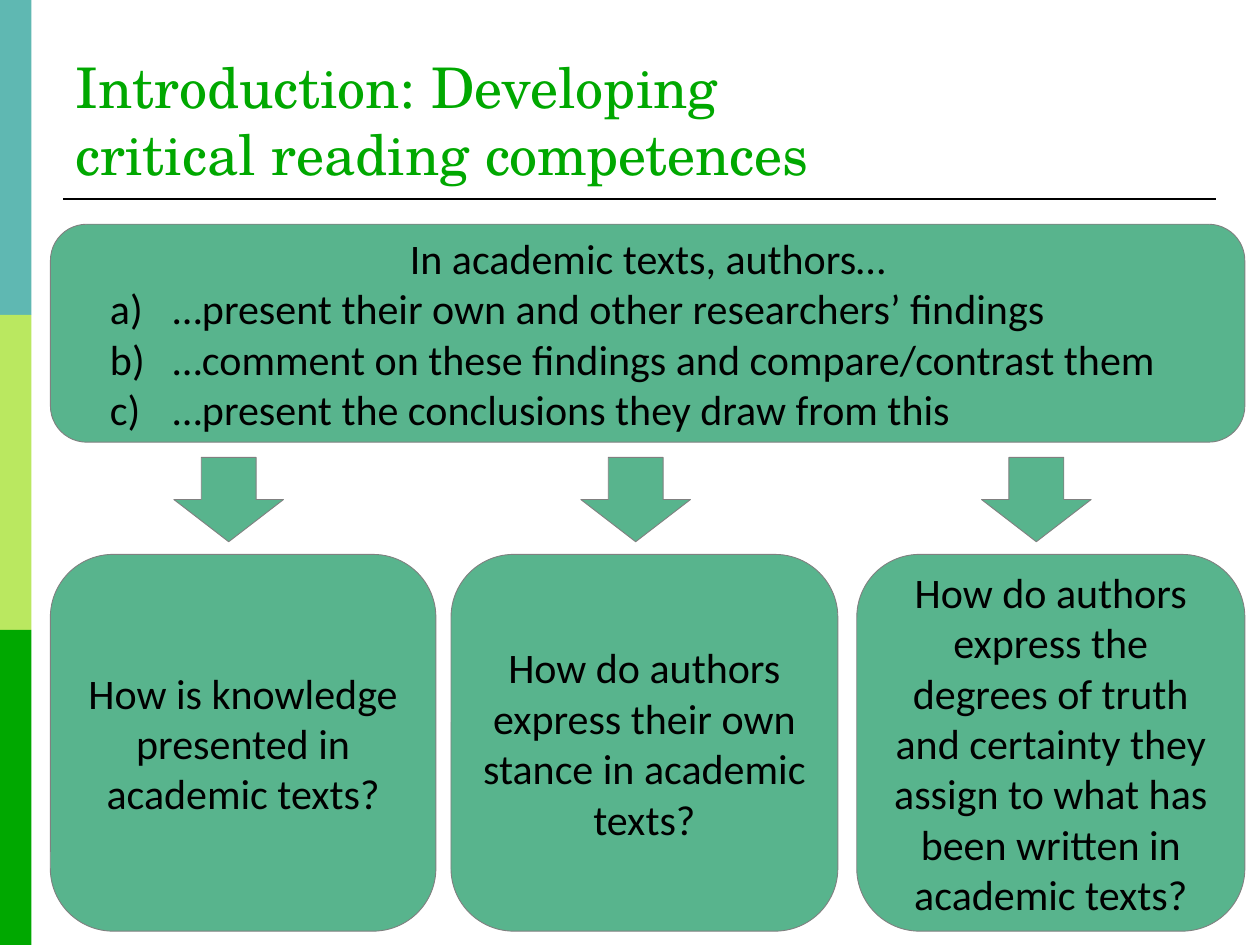
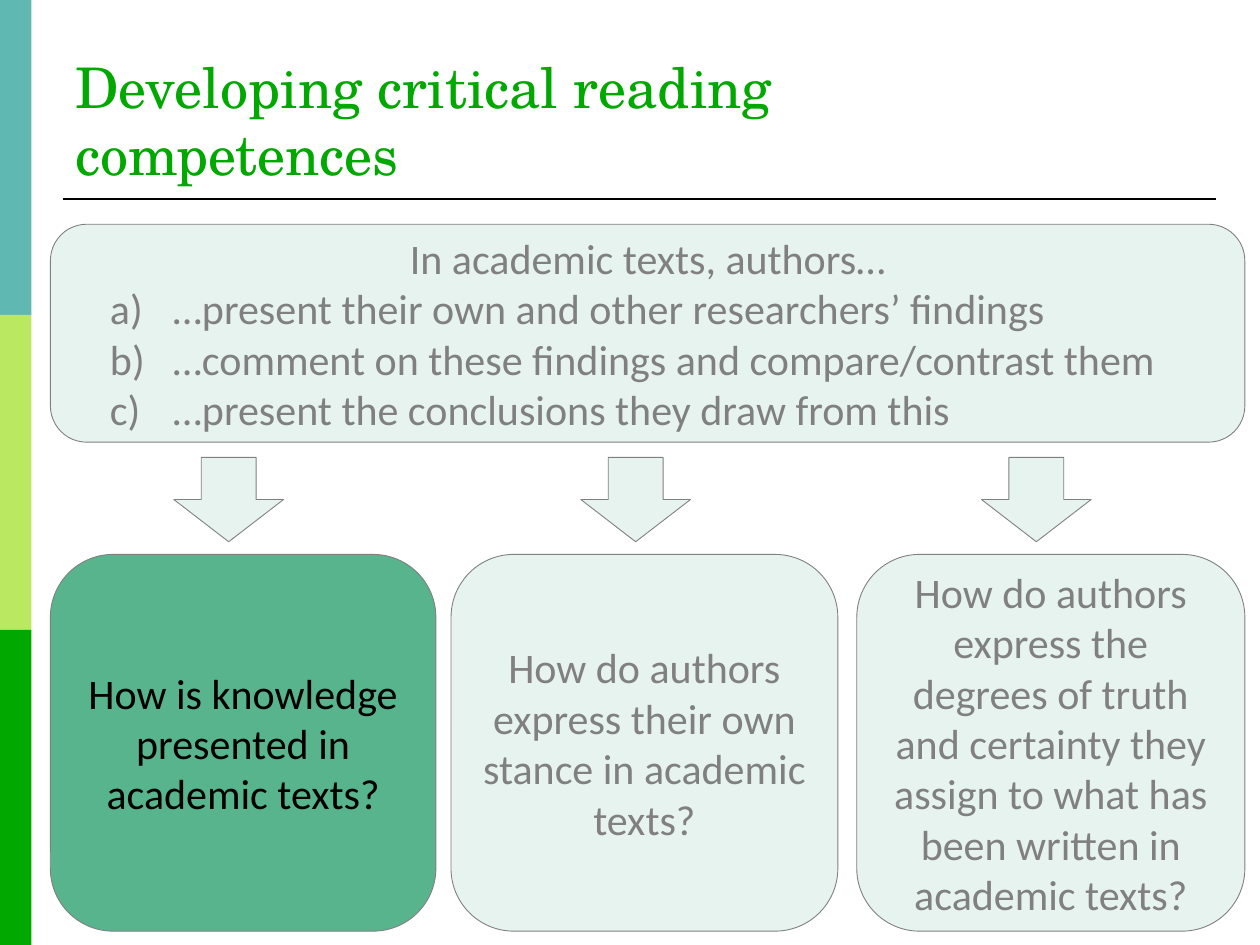
from lxml.etree import SubElement
from pptx import Presentation
from pptx.dml.color import RGBColor
from pptx.enum.shapes import MSO_CONNECTOR as Connector, MSO_SHAPE as Shape
from pptx.enum.text import MSO_ANCHOR as Anchor, PP_ALIGN as Align
from pptx.oxml.ns import qn
from pptx.util import Inches, Pt

# Content: each slide has a title and the numbers of its highlighted questions
SLIDES = [
    {"title": "Introduction: Developing critical reading competences",
     "overview_active": True, "active_questions": {0, 1, 2}},
    {"title": "Developing critical reading competences",
     "overview_active": False, "active_questions": {0}},
]
OVERVIEW_HEADING = "In academic texts, authors…"
OVERVIEW_POINTS = [
    "…present their own and other researchers’ findings",
    "…comment on these findings and compare/contrast them",
    "…present the conclusions they draw from this",
]
QUESTIONS = [
    "How is knowledge presented in academic texts?",
    "How do authors express their own stance in academic texts?",
    "How do authors express the degrees of truth and certainty they assign "
    "to what has been written in academic texts?",
]

# Colours and fonts
TEAL = RGBColor(0x5F, 0xB8, 0xB2)
LIME = RGBColor(0xBA, 0xE8, 0x60)
GREEN = RGBColor(0x00, 0xA8, 0x00)
PANEL = RGBColor(0x58, 0xB4, 0x8D)
GREY = RGBColor(0x80, 0x80, 0x80)
BLACK = RGBColor(0x00, 0x00, 0x00)
FADED_ALPHA = 15
TITLE_FONT, BODY_FONT = "TeX Gyre Schola", "Calibri"

# Layout in inches
WIDTH, HEIGHT = 10, 7.5
BANDS = [TEAL, LIME, GREEN]
BAND_WIDTH = WIDTH / 40
TITLE_AREA = (0.5, 0.28, 6.21, 1.25)
RULE_LEFT, RULE_RIGHT, RULE_TOP = 0.5, 9.65, 1.58
OVERVIEW_AREA = (0.4, 1.78, 9.48, 1.73)
QUESTION_COLUMNS = [(0.4, 3.06), (3.58, 3.07), (6.8, 3.08)]  # left, width
QUESTION_TOP, QUESTION_HEIGHT = 4.4, 2.99
ARROW_LEFTS = [1.48, 4.71, 7.89]
ARROW_TOP, ARROW_LENGTH, ARROW_BREADTH = 3.53, 0.67, 0.87
LIST_MARGIN, LIST_HANG = 0.79, 0.5


def add_filled(page, kind, area, colour):
    shape = page.shapes.add_shape(kind, *map(Inches, area))
    shape.shadow.inherit = False
    shape.fill.solid()
    shape.fill.fore_color.rgb = colour
    shape.line.fill.background()
    return shape


def add_panel(page, kind, area, active):
    """Outlined green shape, see-through when it is not active."""
    shape = add_filled(page, kind, area, PANEL)
    shape.line.color.rgb = GREY
    shape.line.width = Pt(0.5)
    if not active:
        colour = shape.fill._xPr.find(qn("a:solidFill"))[0]
        SubElement(colour, qn("a:alpha"), val=str(FADED_ALPHA * 1000))
    return shape


def style(para, font, size, colour, align):
    para.alignment = align
    para.font.name = font
    para.font.size = Pt(size)
    para.font.color.rgb = colour


def letter(para):
    """Number a paragraph a), b), c) with a hanging indent."""
    properties = para._p.get_or_add_pPr()
    properties.set("marL", str(Inches(LIST_MARGIN)))
    properties.set("indent", str(-Inches(LIST_HANG)))
    SubElement(properties, qn("a:buFont"), typeface=BODY_FONT)
    SubElement(properties, qn("a:buAutoNum"), type="alphaLcParenR")


def add_text_panel(page, area, heading, points, active):
    frame = add_panel(page, Shape.ROUNDED_RECTANGLE, area, active).text_frame
    frame.word_wrap = True
    frame.vertical_anchor = Anchor.MIDDLE
    frame.text = "\n".join([heading, *points])
    for number, para in enumerate(frame.paragraphs):
        if number:
            letter(para)
        style(para, BODY_FONT, 24, BLACK if active else GREY,
              Align.LEFT if number else Align.CENTER)


def add_frame(page, title):
    """Side bands, rule and title, the same on every slide."""
    band_height = HEIGHT / len(BANDS)
    for row, colour in enumerate(BANDS):
        add_filled(page, Shape.RECTANGLE,
                   (0, row * band_height, BAND_WIDTH, band_height), colour)
    rule = page.shapes.add_connector(
        Connector.STRAIGHT, Inches(RULE_LEFT), Inches(RULE_TOP),
        Inches(RULE_RIGHT), Inches(RULE_TOP))
    rule.line.color.rgb = BLACK
    rule.line.width = Pt(1.5)
    SubElement(rule._element.spPr, qn("a:effectLst"))

    frame = page.shapes.add_textbox(*map(Inches, TITLE_AREA)).text_frame
    frame.word_wrap = True
    frame.vertical_anchor = Anchor.BOTTOM
    frame.text = title
    style(frame.paragraphs[0], TITLE_FONT, 32, GREEN, Align.LEFT)


def add_page(deck, content):
    page = deck.slides.add_slide(deck.slide_layouts[6])
    add_frame(page, content["title"])
    overview_active = content["overview_active"]
    add_text_panel(page, OVERVIEW_AREA, OVERVIEW_HEADING, OVERVIEW_POINTS,
                   overview_active)
    # Arrows lead from the overview down to the questions
    for left in ARROW_LEFTS:
        arrow = add_panel(page, Shape.RIGHT_ARROW,
                          (left, ARROW_TOP, ARROW_LENGTH, ARROW_BREADTH),
                          overview_active)
        arrow.rotation = 90
    for number, (question, (left, width)) in enumerate(
            zip(QUESTIONS, QUESTION_COLUMNS)):
        add_text_panel(page, (left, QUESTION_TOP, width, QUESTION_HEIGHT),
                       question, [], number in content["active_questions"])


def main():
    deck = Presentation()
    deck.slide_width, deck.slide_height = Inches(WIDTH), Inches(HEIGHT)
    for content in SLIDES:
        add_page(deck, content)
    deck.save("out.pptx")


if __name__ == "__main__":
    main()
